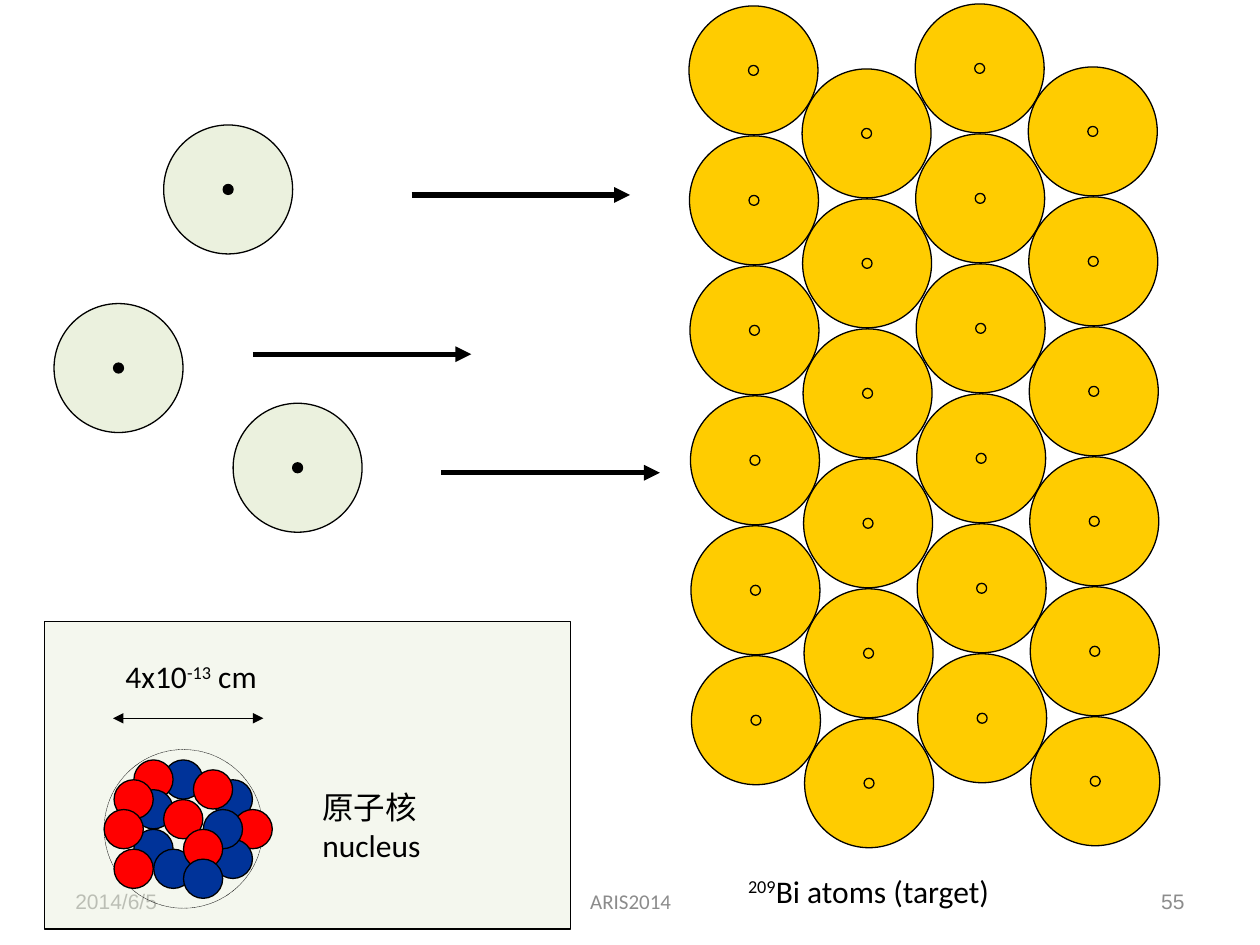
from dataclasses import dataclass
from itertools import cycle, product

from lxml.etree import SubElement
from pptx import Presentation
from pptx.dml.color import RGBColor as Rgb
from pptx.enum.dml import MSO_LINE as Dash
from pptx.enum.shapes import MSO_CONNECTOR as Conn, MSO_SHAPE as Kind
from pptx.enum.text import MSO_ANCHOR as Anchor, PP_ALIGN as Align
from pptx.oxml.ns import qn
from pptx.shapes.base import BaseShape
from pptx.util import Cm, Pt


@dataclass(frozen=True)
class Theme:
    ink: str = "000000"
    grey: str = "8C8C8C"
    pale: str = "EBF1DE"
    gold: str = "FFCC00"
    blue: str = "003399"
    red: str = "FF0000"
    body: str = "Calibri"
    sans: str = "Arial"
    text: int = 18
    foot: int = 12
    thin: float = 0.75
    hair: float = 0.25
    bold: float = 3


@dataclass(frozen=True)
class Atom:
    left: float
    top: float
    fill: str
    core: str


@dataclass(frozen=True)
class Arrow:
    left: float
    top: float
    span: float
    width: float
    both: bool = False


@dataclass(frozen=True)
class Label:
    left: float
    top: float
    width: float
    height: float
    runs: tuple[tuple[str, bool], ...]
    size: int
    font: str
    color: str
    align: Align = Align.LEFT
    anchor: Anchor = Anchor.TOP


LOOK = Theme()
ATOM, CORE, BALL = 2.6, 0.2, 0.79
PITCH, STEP, DROP = 2.62, 2.28, 1.27

BEAM = [Atom(x, y, LOOK.pale, LOOK.ink)
        for x, y in ((3.3, 2.52), (1.09, 6.12), (4.7, 8.13))]
TARGET = [
    Atom(13.89 + STEP * col + 0.01 * row,
         0.12 - 0.04 * (col // 2) + DROP * (col % 2) + PITCH * row,
         LOOK.gold, LOOK.gold)
    for col, row in product(range(4), range(6))
]
BALLS = (
    (6, 0), (3, 0), (11, 2), (9, 1), (3, 3), (13, 5), (11, 8), (1, 2),
    (3, 7), (6, 4), (10, 5), (0, 5), (5, 9), (8, 7), (8, 10), (1, 9),
)
ARROWS = [Arrow(x, y, 4.4, LOOK.bold)
          for x, y in ((5.1, 7.14), (8.3, 3.93), (8.9, 9.53))]
SCALE = Arrow(2.28, 14.48, 3.03, LOOK.thin, True)


def note(left: float, top: float, width: float, height: float,
         *runs: tuple[str, bool]) -> Label:
    return Label(left, top, width, height, runs, LOOK.text, LOOK.body, LOOK.ink)


def foot(left: float, width: float, text: str, font: str, align: Align) -> Label:
    return Label(left, 17.65, width, 1.02, ((text, False),), LOOK.foot, font,
                 LOOK.grey, align, Anchor.MIDDLE)


DATE = foot(1.27, 5.92, "2014/6/5", LOOK.sans, Align.LEFT)
LABELS = (
    note(2.28, 13.13, 3.53, 1.02, ("4x10", False), ("-13", True), (" cm", False)),
    note(6.25, 15.77, 4.6, 1.8, ("原子核　nucleus", False)),
    note(14.83, 17.45, 7.7, 1.27, ("209", True), ("Bi atoms (target)", False)),
    foot(18.21, 5.92, "55", LOOK.sans, Align.RIGHT),
    foot(8.69, 8.05, "ARIS2014", LOOK.body, Align.CENTER),
)


def draw_form(tree, kind: Kind, left: float, top: float, width: float,
              height: float, fill: str | None, line: float = LOOK.thin) -> BaseShape:
    form = tree.add_shape(kind, Cm(left), Cm(top), Cm(width), Cm(height))
    form.shadow.inherit = False
    if fill:
        form.fill.solid()
        form.fill.fore_color.rgb = Rgb.from_string(fill)
    else:
        form.fill.background()
    form.line.color.rgb = Rgb.from_string(LOOK.ink)
    form.line.width = Pt(line)
    return form


def draw_disc(tree, left: float, top: float, size: float, fill: str | None,
              line: float = LOOK.thin) -> BaseShape:
    return draw_form(tree, Kind.OVAL, left, top, size, size, fill, line)


def draw_atom(tree, atom: Atom) -> None:
    group = tree.add_group_shape().shapes
    inset = (ATOM - CORE) / 2
    draw_disc(group, atom.left, atom.top, ATOM, atom.fill)
    draw_disc(group, atom.left + inset, atom.top + inset, CORE, atom.core)


def draw_arrow(tree, arrow: Arrow) -> None:
    link = tree.add_connector(Conn.STRAIGHT, Cm(arrow.left), Cm(arrow.top),
                              Cm(arrow.left + arrow.span), Cm(arrow.top))
    link.line.color.rgb = Rgb.from_string(LOOK.ink)
    link.line.width = Pt(arrow.width)
    props = link._element.spPr
    line = props.find(qn("a:ln"))
    for end in ("a:headEnd", "a:tailEnd") if arrow.both else ("a:tailEnd",):
        SubElement(line, qn(end), type="triangle")
    SubElement(props, qn("a:effectLst"))


def draw_label(tree, label: Label) -> None:
    box = tree.add_textbox(Cm(label.left), Cm(label.top),
                           Cm(label.width), Cm(label.height))
    frame = box.text_frame
    frame.word_wrap = True
    frame.vertical_anchor = label.anchor
    para = frame.paragraphs[0]
    para.alignment = label.align
    for text, raised in label.runs:
        run = para.add_run()
        run.text = text
        run.font.name = label.font
        run.font.size = Pt(label.size)
        run.font.color.rgb = Rgb.from_string(label.color)
        if raised:
            run.font._element.set("baseline", "30000")


def draw_core(tree) -> None:
    shell = draw_disc(tree, 2.1, 15.11, 3.2, None, LOOK.hair)
    shell.line.dash_style = Dash.ROUND_DOT
    for (col, row), fill in zip(BALLS, cycle((LOOK.blue, LOOK.red))):
        draw_disc(tree, 2.1 + 0.2 * col, 15.32 + 0.2 * row, BALL, fill)


def main() -> None:
    deck = Presentation()
    deck.slide_width, deck.slide_height = Cm(25.4), Cm(19.05)
    tree = deck.slides.add_slide(deck.slide_layouts[6]).shapes
    draw_label(tree, DATE)
    panel = draw_form(tree, Kind.RECTANGLE, 0.9, 12.53, 10.6, 6.2, LOOK.pale)
    tint = panel._element.spPr.find(qn("a:solidFill"))[0]
    SubElement(tint, qn("a:alpha"), val="50000")
    draw_core(tree)
    for atom in BEAM + TARGET:
        draw_atom(tree, atom)
    for arrow in [SCALE, *ARROWS]:
        draw_arrow(tree, arrow)
    for label in LABELS:
        draw_label(tree, label)
    deck.save("out.pptx")


if __name__ == "__main__":
    main()
